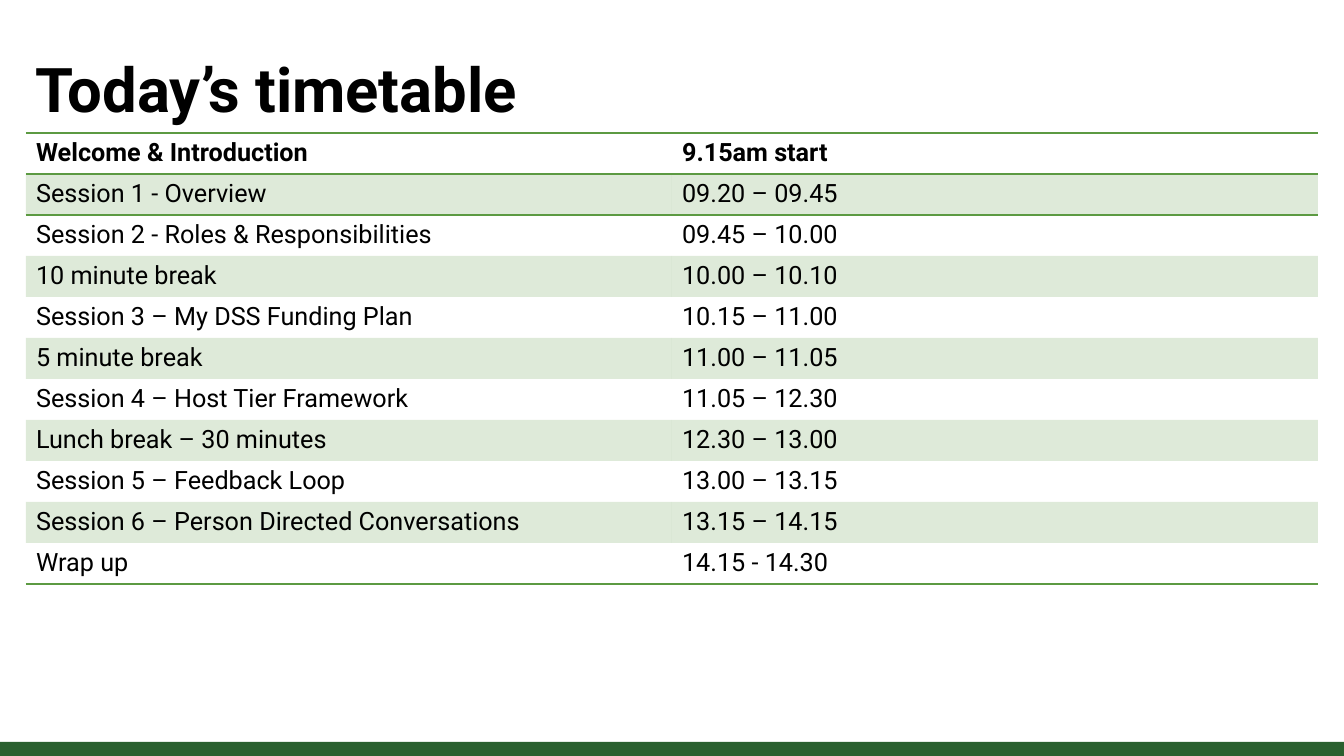
"""Builds the timetable slide with its title, session table and footer band."""
import pptx
import pptx.dml.color
import pptx.enum.shapes
import pptx.enum.text
import pptx.oxml
import pptx.oxml.ns
import pptx.util

PX = 12192000 / 1344
GREEN = "5C9A42"
LEFT, WIDTH, ROW_HEIGHT = 26, 1292, 41
NO_GRID_STYLE = "{2D5ABB26-0587-4C30-8999-92F81FD0307C}"

SESSIONS = [
    ("Welcome & Introduction", "9.15am start"),
    ("Session 1 - Overview", "09.20 – 09.45"),
    ("Session 2 - Roles & Responsibilities", "09.45 – 10.00"),
    ("10 minute break", "10.00 – 10.10"),
    ("Session 3 – My DSS Funding Plan", "10.15 – 11.00"),
    ("5 minute break", "11.00 – 11.05"),
    ("Session 4 – Host Tier Framework", "11.05 – 12.30"),
    ("Lunch break – 30 minutes", "12.30 – 13.00"),
    ("Session 5 – Feedback Loop", "13.00 – 13.15"),
    ("Session 6 – Person Directed Conversations", "13.15 – 14.15"),
    ("Wrap up", "14.15 - 14.30"),
]


def px(*lengths):
    return [pptx.util.Emu(round(length * PX)) for length in lengths]


def color(hex_code):
    return pptx.dml.color.RGBColor.from_string(hex_code)


presentation = pptx.Presentation()
presentation.slide_width, presentation.slide_height = px(1344, 756)
slide = presentation.slides.add_slide(presentation.slide_layouts[6])

footer = slide.shapes.add_shape(
    pptx.enum.shapes.MSO_SHAPE.RECTANGLE, *px(0, 742, 1344, 14))
footer.shadow.inherit = False
footer.fill.solid()
footer.fill.fore_color.rgb = color("2A602F")
footer.line.fill.background()

title = slide.shapes.add_textbox(*px(LEFT, 41, WIDTH, 72)).text_frame
title.word_wrap = True
title.vertical_anchor = pptx.enum.text.MSO_ANCHOR.TOP
title.margin_top, title.margin_bottom = px(10, 0)
heading = title.paragraphs[0]
heading.text = "Today’s timetable"
heading.font.name = "Roboto"
heading.font.size = pptx.util.Pt(44)
heading.font.bold = True
heading.font.color.rgb = color("000000")

timetable = slide.shapes.add_table(
    len(SESSIONS), 2, *px(LEFT, 133, WIDTH, ROW_HEIGHT * len(SESSIONS))).table
timetable.first_row = True
timetable.horz_banding = False
timetable._tbl.tblPr.find(pptx.oxml.ns.qn("a:tableStyleId")).text = NO_GRID_STYLE

for row_index, session in enumerate(SESSIONS):
    timetable.rows[row_index].height = px(ROW_HEIGHT)[0]
    is_header = row_index == 0
    edges = []
    if is_header:
        edges = ["lnT", "lnB"]
    elif row_index == 1:
        edges = ["lnT"]
    elif row_index == len(SESSIONS) - 1:
        edges = ["lnB"]
    for column_index, wording in enumerate(session):
        cell = timetable.cell(row_index, column_index)
        cell.text = wording
        entry = cell.text_frame.paragraphs[0]
        entry.font.name = "Roboto"
        entry.font.size = pptx.util.Pt(18)
        entry.font.bold = is_header
        entry.font.color.rgb = color("000000")
        properties = cell._tc.get_or_add_tcPr()
        for edge in edges:
            properties.append(pptx.oxml.parse_xml(
                f'<a:{edge} {pptx.oxml.ns.nsdecls("a")} w="12700"><a:solidFill>'
                f'<a:srgbClr val="{GREEN}"/></a:solidFill></a:{edge}>'))
        if row_index % 2:
            cell.fill.solid()
            cell.fill.fore_color.rgb = color(GREEN)
            tint = properties.find(
                f'{pptx.oxml.ns.qn("a:solidFill")}/{pptx.oxml.ns.qn("a:srgbClr")}')
            tint.append(pptx.oxml.parse_xml(
                f'<a:alpha {pptx.oxml.ns.nsdecls("a")} val="20000"/>'))
        else:
            cell.fill.background()

presentation.save("out.pptx")
